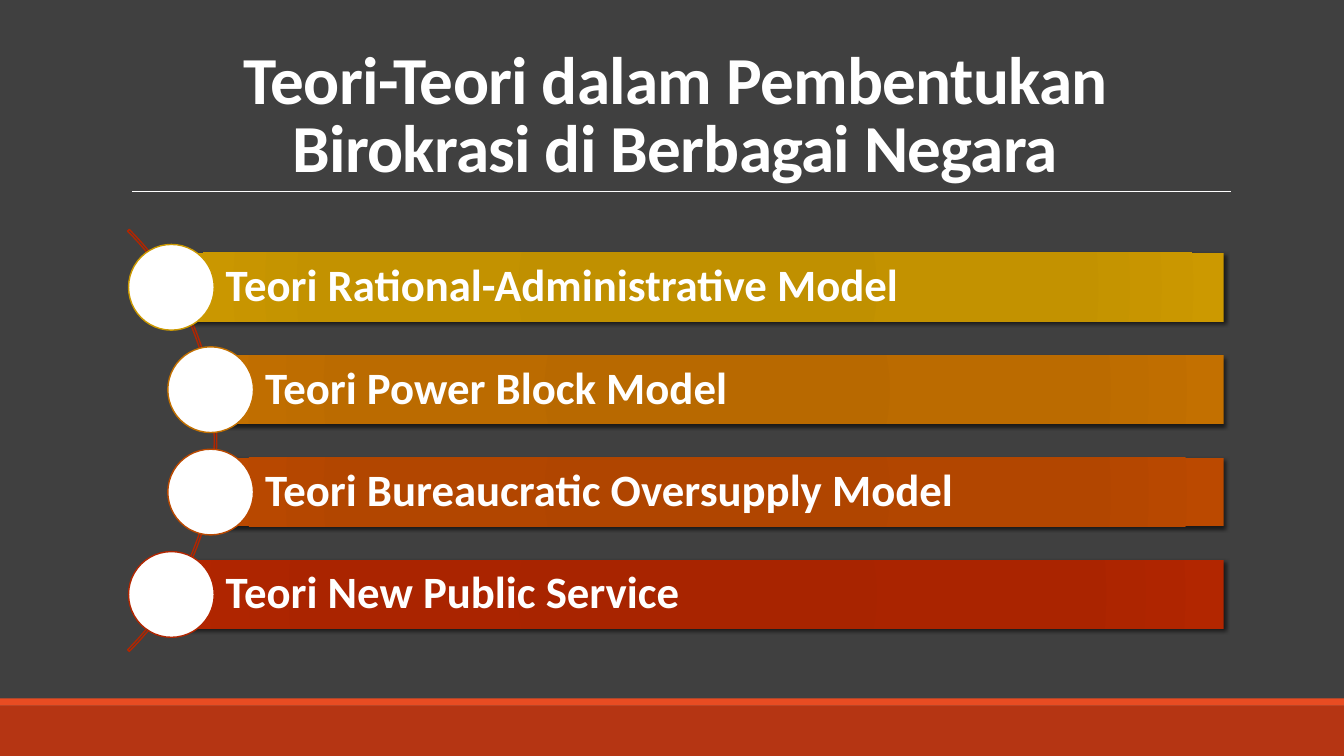
from lxml import etree
from pptx import Presentation
from pptx import util as u
from pptx.dml.color import RGBColor
from pptx.enum import shapes, text
from pptx.oxml import parse_xml
from pptx.oxml.ns import nsdecls, qn

BACKGROUND = RGBColor(0x40, 0x40, 0x40)
WHITE = RGBColor(0xFF, 0xFF, 0xFF)
FOOTER = RGBColor(0xB5, 0x35, 0x13)
FOOTER_EDGE = RGBColor(0xE8, 0x4C, 0x22)
ARC_LINE = RGBColor(0xB2, 0x26, 0x00)

presentation = Presentation()
presentation.slide_width, presentation.slide_height = u.Cm(33.87), u.Cm(19.05)
slide = presentation.slides.add_slide(presentation.slide_layouts[6])
slide.background.fill.solid()
slide.background.fill.fore_color.rgb = BACKGROUND


def add_shape(kind, left, top, width, height, fill=None, line=None):
    shape = slide.shapes.add_shape(
        kind, u.Cm(left), u.Cm(top), u.Cm(width), u.Cm(height))
    shape.shadow.inherit = False
    if fill is None:
        shape.fill.background()
    else:
        shape.fill.solid()
        shape.fill.fore_color.rgb = fill
    if line is None:
        shape.line.fill.background()
    else:
        shape.line.color.rgb = line
        shape.line.width = u.Pt(1)
    return shape


def format_paragraph(paragraph, size, spacing):
    paragraph.line_spacing = spacing
    font = paragraph.runs[0].font
    font.name, font.size, font.bold = "Calibri", u.Pt(size), True
    font.color.rgb = WHITE


# Footer band
add_shape(shapes.MSO_SHAPE.RECTANGLE, 0, 17.78, 33.87, 1.27, FOOTER)
add_shape(shapes.MSO_SHAPE.RECTANGLE, 0, 17.6, 33.87, 0.18, FOOTER_EDGE)

# Title and the rule below it
rule = slide.shapes.add_connector(
    shapes.MSO_CONNECTOR.STRAIGHT, u.Cm(3.33), u.Cm(4.82), u.Cm(31.01), u.Cm(4.82))
rule.line.color.rgb = WHITE
rule.line.width = u.Pt(0.5)
etree.SubElement(rule._element.spPr, qn("a:effectLst"))

title = slide.shapes.add_textbox(u.Cm(3.05), u.Cm(0.79), u.Cm(27.94), u.Cm(4.04))
title.text_frame.word_wrap = True
title.text_frame.vertical_anchor = text.MSO_ANCHOR.BOTTOM
title.text_frame.text = "Teori-Teori dalam Pembentukan Birokrasi di Berbagai Negara"
heading = title.text_frame.paragraphs[0]
heading.alignment = text.PP_ALIGN.CENTER
format_paragraph(heading, 48, 0.85)
heading.runs[0].font._element.set("spc", "-50")

# Arc behind the list
arc = add_shape(shapes.MSO_SHAPE.BLOCK_ARC, -9.58, 3.58, 15.04, 15.04, line=ARC_LINE)
for index, value in enumerate((189, 27, 0.004)):
    arc.adjustments[index] = value

# Theories: label, circle centre, gradient colours from start to end
THEORIES = [
    ("Teori Rational-Administrative Model", 4.32, ("BE8F00", "C09000", "C39200", "CC9900")),
    ("Teori Power Block Model", 5.31, ("B66800", "B86900", "BB6B00", "C37000")),
    ("Teori Bureaucratic Oversupply Model", 5.31, ("AE4400", "B04500", "B24600", "BB4900")),
    ("Teori New Public Service", 4.32, ("A62300", "A82400", "AA2400", "B22600")),
]
STOPS = (0, 34, 70, 100)
FIRST_MIDDLE, PITCH = 7.24, 2.58
BAR_RIGHT, BAR_HEIGHT, CIRCLE = 30.84, 1.73, 2.16

for row, (label, centre, colors) in enumerate(THEORIES):
    middle = FIRST_MIDDLE + row * PITCH

    # Bar with its label
    bar = add_shape(shapes.MSO_SHAPE.RECTANGLE, centre, middle - BAR_HEIGHT / 2,
                    BAR_RIGHT - centre, BAR_HEIGHT)
    frame = bar.text_frame
    frame.word_wrap = True
    frame.vertical_anchor = text.MSO_ANCHOR.MIDDLE
    frame.margin_left = u.Cm(1.37)
    frame.margin_right = frame.margin_top = frame.margin_bottom = u.Cm(0.23)
    frame.text = label
    frame.paragraphs[0].alignment = text.PP_ALIGN.LEFT
    format_paragraph(frame.paragraphs[0], 32, 0.9)

    # Radial gradient and soft shadow
    stops = "".join(
        f'<a:gs pos="{stop * 1000}"><a:srgbClr val="{color}"/></a:gs>'
        for stop, color in zip(STOPS, colors))
    gradient = parse_xml(
        f'<a:gradFill {nsdecls("a")} rotWithShape="1"><a:gsLst>{stops}</a:gsLst>'
        '<a:path path="circle"><a:fillToRect l="100000" t="100000" r="100000" b="100000"/>'
        '</a:path></a:gradFill>')
    properties = bar._element.spPr
    properties.replace(properties.find(qn("a:noFill")), gradient)
    properties.find(qn("a:effectLst")).append(parse_xml(
        f'<a:outerShdw {nsdecls("a")} blurRad="{u.Pt(3)}" dist="{u.Pt(2)}" dir="2700000" '
        'rotWithShape="0"><a:srgbClr val="000000"><a:alpha val="60000"/></a:srgbClr>'
        '</a:outerShdw>'))

    # Circle on the bar's left end
    add_shape(shapes.MSO_SHAPE.OVAL, centre - CIRCLE / 2, middle - CIRCLE / 2,
              CIRCLE, CIRCLE, WHITE, RGBColor.from_string(colors[-1]))

presentation.save("out.pptx")
